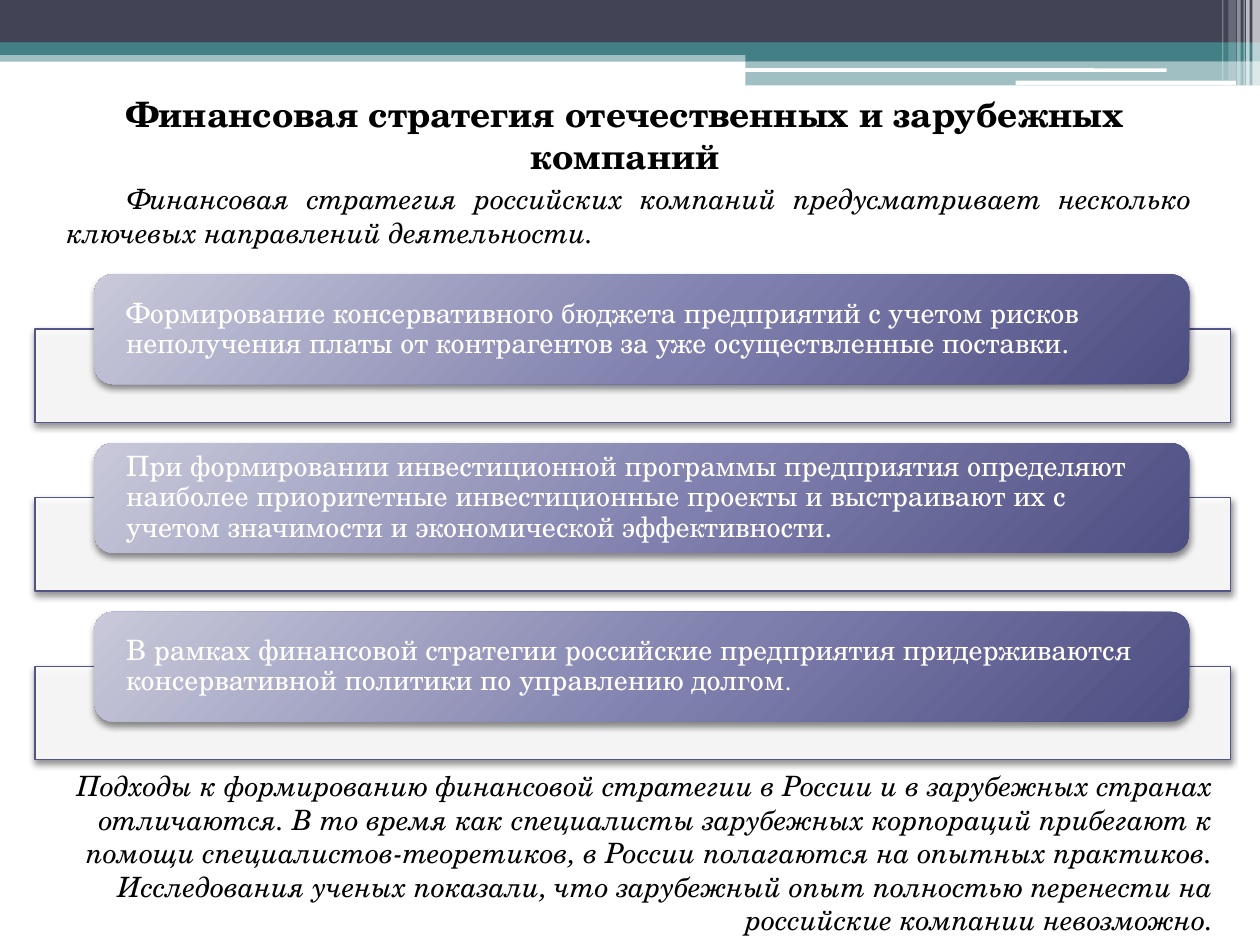
from lxml import etree
from pptx import Presentation
from pptx.dml.color import RGBColor
from pptx.enum.shapes import MSO_SHAPE as Shape
from pptx.enum.text import MSO_ANCHOR as Anchor, MSO_AUTO_SIZE as AutoSize, PP_ALIGN as Align
from pptx.oxml import parse_xml
from pptx.oxml.ns import nsdecls, qn
from pptx.util import Pt

FONT = "TeX Gyre Schola"
COLORS = {
    "black": "000000", "white": "FFFFFF", "navy": "424456", "teal": "438086",
    "outline": "53548A", "light": "C9C9DA", "middle": "7F80AE", "dark": "4D4E81",
}
CARD_STOPS = [(0, "light"), (55, "middle"), (100, "dark")]

TITLE = "Финансовая стратегия отечественных и зарубежных компаний"
INTRO = ("Финансовая стратегия российских компаний предусматривает несколько "
         "ключевых направлений деятельности.")
# Each card is a list of runs: text, size
CARDS = [
    [("Формирование консервативного бюджета предприятий с учетом рисков "
      "неполучения платы от контрагентов за уже осуществленные поставки.", 16)],
    [("При формировании инвестиционной программы предприятия определяют "
      "наиболее приоритетные инвестиционные проекты и выстраивают "
      "их с учетом значимости и экономической эффективности.", 16)],
    [("В рамках финансовой стратегии российские предприятия придерживаются "
      "консервативной политики по управлению долгом", 16), (".", 14)],
]
CONCLUSION = (
    "Подходы к формированию финансовой стратегии в России и в зарубежных странах "
    "отличаются. В то время как специалисты зарубежных корпораций прибегают к помощи "
    "специалистов-теоретиков, в России полагаются на опытных практиков. Исследования "
    "ученых показали, что зарубежный опыт полностью перенести на российские компании "
    "невозможно.")

# Header bands: left, top, width, height, colour, opacity in percent
BANDS = [
    (0, 28.8, 720, 6.5, "teal", 50),
    (0, 0, 720, 24.5, "navy", 100),
    (0, 24.2, 720, 7.2, "teal", 100),
    (426, 28, 294, 7, "teal", 100),
    (426, 34.6, 294, 14.2, "teal", 50),
]
HIGHLIGHTS = [(425.5, 39, 241.2, 2), (580.3, 46.1, 126, 2.6)]
# Vertical stripes at the right edge: left, width, height, opacity
STRIPES = [
    (715.6, 4.4, 49, 65), (712.1, 2, 49, 65), (710.6, 0.7, 49, 60),
    (707, 2, 49, 40), (702, 4.3, 46, 20), (698.4, 0.7, 46, 30),
]

CARD_TOP, PANEL_TOP, PITCH = 156.8, 188, 96.43
CARD_LEFT, CARD_W, CARD_H = 54, 625.7, 62.7
PANEL_LEFT, PANEL_W, PANEL_H = 20, 683.3, 53.3


def rgb(name):
    return RGBColor.from_string(COLORS[name])


def add_block(s, box, color, opacity=100, kind=Shape.RECTANGLE):
    sp = s.shapes.add_shape(kind, *map(Pt, box))
    sp.shadow.inherit = False
    sp.line.fill.background()
    sp.fill.solid()
    sp.fill.fore_color.rgb = rgb(color)
    if opacity < 100:
        clr = sp.fill._xPr.find(qn("a:solidFill"))[0]
        etree.SubElement(clr, qn("a:alpha"), val=str(opacity * 1000))
    return sp


def add_drop_shadow(sp):
    effects = sp._element.spPr.find(qn("a:effectLst"))
    effects.append(parse_xml(
        f'<a:outerShdw {nsdecls("a")} blurRad="{Pt(4)}" dist="{Pt(2)}" dir="5400000" '
        f'rotWithShape="0"><a:srgbClr val="{COLORS["black"]}"><a:alpha val="45000"/>'
        '</a:srgbClr></a:outerShdw>'))


def set_card_gradient(sp):
    """Replace the fill with a wide circular gradient."""
    stops = "".join(
        f'<a:gs pos="{pos * 1000}"><a:srgbClr val="{COLORS[name]}"/></a:gs>'
        for pos, name in CARD_STOPS)
    gradient = parse_xml(
        f'<a:gradFill {nsdecls("a")} rotWithShape="1"><a:gsLst>{stops}</a:gsLst>'
        '<a:path path="circle"><a:fillToRect l="-40000" t="-90000" r="140000" b="190000"/>'
        '</a:path></a:gradFill>')
    sp_pr = sp._element.spPr
    sp_pr.replace(sp_pr.find(qn("a:solidFill")), gradient)


def write(tf, runs, align, color="black", bold=False, italic=False):
    tf.word_wrap = True
    p = tf.paragraphs[0]
    p.alignment = align
    for text, size in runs:
        r = p.add_run()
        r.text = text
        r.font.name, r.font.size = FONT, Pt(size)
        r.font.bold, r.font.italic = bold, italic
        r.font.color.rgb = rgb(color)
    return p


def add_note(s, box, text, align):
    tf = s.shapes.add_textbox(*map(Pt, box)).text_frame
    p = write(tf, [(text, 16)], align, italic=True)
    tf.auto_size = AutoSize.SHAPE_TO_FIT_TEXT
    return tf, p


def add_header(s):
    for *box, color, opacity in BANDS:
        add_block(s, box, color, opacity)
    for box in HIGHLIGHTS:
        add_block(s, box, "white", kind=Shape.ROUNDED_RECTANGLE)
    for left, width, height, opacity in STRIPES:
        add_block(s, (left, 0, width, height), "white", opacity)


def add_title(s):
    title = s.shapes.title
    title.left, title.top, title.width, title.height = map(Pt, (20, 49, 674.6, 55.7))
    tf = title.text_frame
    write(tf, [(TITLE, 20)], Align.CENTER, bold=True)
    tf.vertical_anchor = Anchor.TOP
    tf.auto_size = AutoSize.NONE


def add_card(s, index, runs):
    shift = index * PITCH
    panel = add_block(s, (PANEL_LEFT, PANEL_TOP + shift, PANEL_W, PANEL_H), "white", 90)
    panel.line.color.rgb = rgb("outline")
    panel.line.width = Pt(0.75)
    add_drop_shadow(panel)

    card = add_block(s, (CARD_LEFT, CARD_TOP + shift, CARD_W, CARD_H), "middle",
                     kind=Shape.ROUNDED_RECTANGLE)
    set_card_gradient(card)
    add_drop_shadow(card)
    tf = card.text_frame
    tf.margin_left = tf.margin_right = Pt(15)
    tf.margin_top = tf.margin_bottom = 0
    tf.vertical_anchor = Anchor.MIDDLE
    write(tf, runs, Align.LEFT, "white").line_spacing = 0.9


def main():
    prs = Presentation()
    prs.slide_width, prs.slide_height = Pt(720), Pt(540)
    s = prs.slides.add_slide(prs.slide_layouts[5])
    add_header(s)
    add_title(s)
    tf, p = add_note(s, (31, 100, 657.4, 46), INTRO, Align.JUSTIFY)
    tf.vertical_anchor = Anchor.MIDDLE
    p._p.get_or_add_pPr().set("indent", str(Pt(35.4)))
    for index, runs in enumerate(CARDS):
        add_card(s, index, runs)
    add_note(s, (14.4, 435.6, 686.2, 104.4), CONCLUSION, Align.RIGHT)
    prs.save("out.pptx")


if __name__ == "__main__":
    main()
